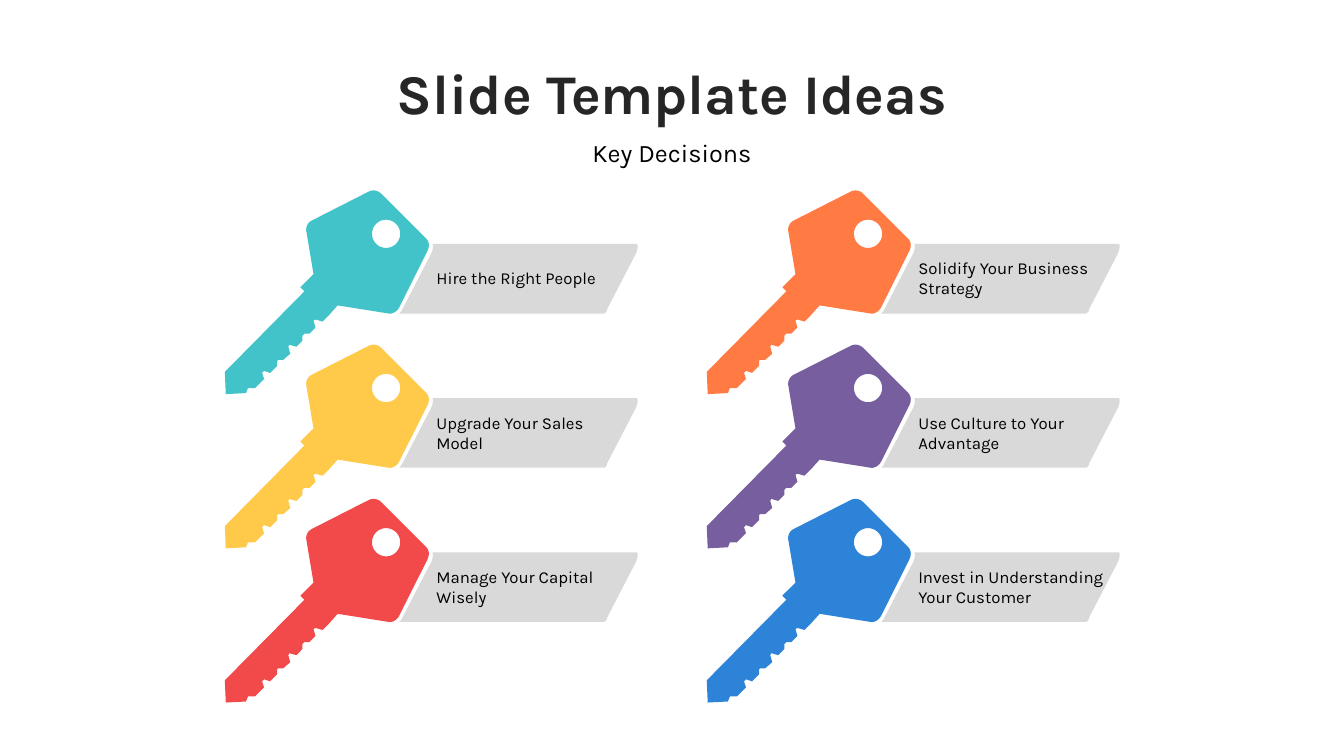
from math import cos, pi, sin

from pptx import Presentation
from pptx.dml.color import RGBColor
from pptx.enum.text import MSO_ANCHOR, MSO_AUTO_SIZE, PP_ALIGN
from pptx.util import Inches, Pt

COLUMN_PITCH, ROW_PITCH = 4.78, 1.53
DECISIONS = [  # text, key colour; row by row
    ("Hire the Right People", "42C3C9"),
    ("Solidify Your Business Strategy", "FF7B43"),
    ("Upgrade Your Sales Model", "FFC94A"),
    ("Use Culture to Your Advantage", "775E9E"),
    ("Manage Your Capital Wisely", "F2494B"),
    ("Invest in Understanding Your Customer", "2D83D8"),
]

# Outlines of the top left item in inches: a pair is a corner,
# six numbers are a Bézier curve from the point before
BAND = [
    (6.31, 2.51), (6.32, 2.48, 6.33, 2.45, 6.32, 2.42),
    (4.29, 2.42), (4.3, 2.45, 4.29, 2.48, 4.28, 2.51),
    (3.99, 3.07), (3.98, 3.09, 3.97, 3.1, 3.96, 3.11),
    (5.99, 3.11), (6.01, 3.1, 6.02, 3.09, 6.02, 3.07),
]
KEY = [
    # head, left side
    (4.23, 2.37), (3.78, 1.92), (3.75, 1.89, 3.7, 1.88, 3.66, 1.9),
    (3.09, 2.19), (3.05, 2.21, 3.03, 2.26, 3.04, 2.3), (3.11, 2.72),
    # blade and tip
    (2.98, 2.85), (3.02, 2.89), (2.23, 3.69), (2.24, 3.91), (2.44, 3.9),
    # teeth
    (2.46, 3.85), (2.53, 3.85), (2.62, 3.76), (2.6, 3.7), (2.62, 3.68),
    (2.68, 3.7), (2.75, 3.63), (2.75, 3.58), (2.76, 3.57), (2.81, 3.57),
    (2.88, 3.51), (2.86, 3.44), (2.87, 3.42), (2.94, 3.44), (3, 3.38),
    (3, 3.33), (3.02, 3.31), (3.07, 3.31), (3.13, 3.25), (3.11, 3.18),
    (3.13, 3.17), (3.2, 3.19), (3.26, 3.13), (3.35, 3.03),
    # head, right side
    (3.85, 3.11), (3.89, 3.12, 3.94, 3.09, 3.96, 3.05),
    (4.24, 2.49), (4.26, 2.45, 4.26, 2.4, 4.23, 2.37),
]
HOLE = [(3.83 + 0.14 * cos(pi * i / 24), 2.32 + 0.14 * sin(pi * i / 24))
        for i in range(48)]

prs = Presentation()
prs.slide_width, prs.slide_height = Inches(13.33), Inches(7.5)
slide = prs.slides.add_slide(prs.slide_layouts[5])


def draw_outline(contours, dx, dy, color):
    """Draw closed contours, moved by dx and dy, as one filled shape."""
    builder = None
    for contour in contours:
        points = []
        for step in contour:
            if len(step) == 2:
                points.append(step)
                continue
            curve = [points[-1], step[:2], step[2:4], step[4:]]
            for i in range(1, 9):
                t = i / 8
                weights = ((1 - t) ** 3, 3 * t * (1 - t) ** 2,
                           3 * t ** 2 * (1 - t), t ** 3)
                points.append(tuple(sum(w * p[axis] for w, p in zip(weights, curve))
                                    for axis in (0, 1)))
        places = [(Inches(x + dx), Inches(y + dy)) for x, y in points]
        if builder is None:
            builder = slide.shapes.build_freeform(*places[0])
        else:
            builder.move_to(*places[0])
        builder.add_line_segments(places[1:], close=True)
    shape = builder.convert_to_shape()
    shape.shadow.inherit = False
    shape.fill.solid()
    shape.fill.fore_color.rgb = RGBColor.from_string(color)
    shape.line.fill.background()


def write_text(shape, text, box, size, color, bold, align, anchor):
    """Place a text shape and format its single paragraph."""
    shape.left, shape.top, shape.width, shape.height = map(Inches, box)
    frame = shape.text_frame
    frame.text = text
    frame.word_wrap = True
    frame.auto_size = MSO_AUTO_SIZE.NONE
    frame.vertical_anchor = anchor
    paragraph = frame.paragraphs[0]
    paragraph.alignment = align
    for name, value in {"name": "Karla", "size": Pt(size), "bold": bold}.items():
        setattr(paragraph.font, name, value)
    paragraph.font.color.rgb = RGBColor.from_string(color)


# Title and subtitle
write_text(slide.shapes.title, "Slide Template Ideas", (0, 0.53, 13.33, 0.77),
           40, "262626", True, PP_ALIGN.CENTER, MSO_ANCHOR.TOP)
subtitle = slide.shapes.add_textbox(0, 0, 0, 0)
write_text(subtitle, "Key Decisions", (0, 1.31, 13.33, 0.4),
           18, "000000", False, PP_ALIGN.CENTER, MSO_ANCHOR.TOP)

# Keys with their bands and decisions
for index, (decision, key_color) in enumerate(DECISIONS):
    row, column = divmod(index, 2)
    dx, dy = column * COLUMN_PITCH, row * ROW_PITCH
    draw_outline([BAND], dx, dy, "D9D9D9")
    draw_outline([KEY, HOLE], dx, dy, key_color)
    label = slide.shapes.add_textbox(0, 0, 0, 0)
    write_text(label, decision, (4.23 + dx, 2.51 + dy, 2.06, 0.5),
               12, "000000", False, PP_ALIGN.LEFT, MSO_ANCHOR.MIDDLE)

prs.save("out.pptx")
